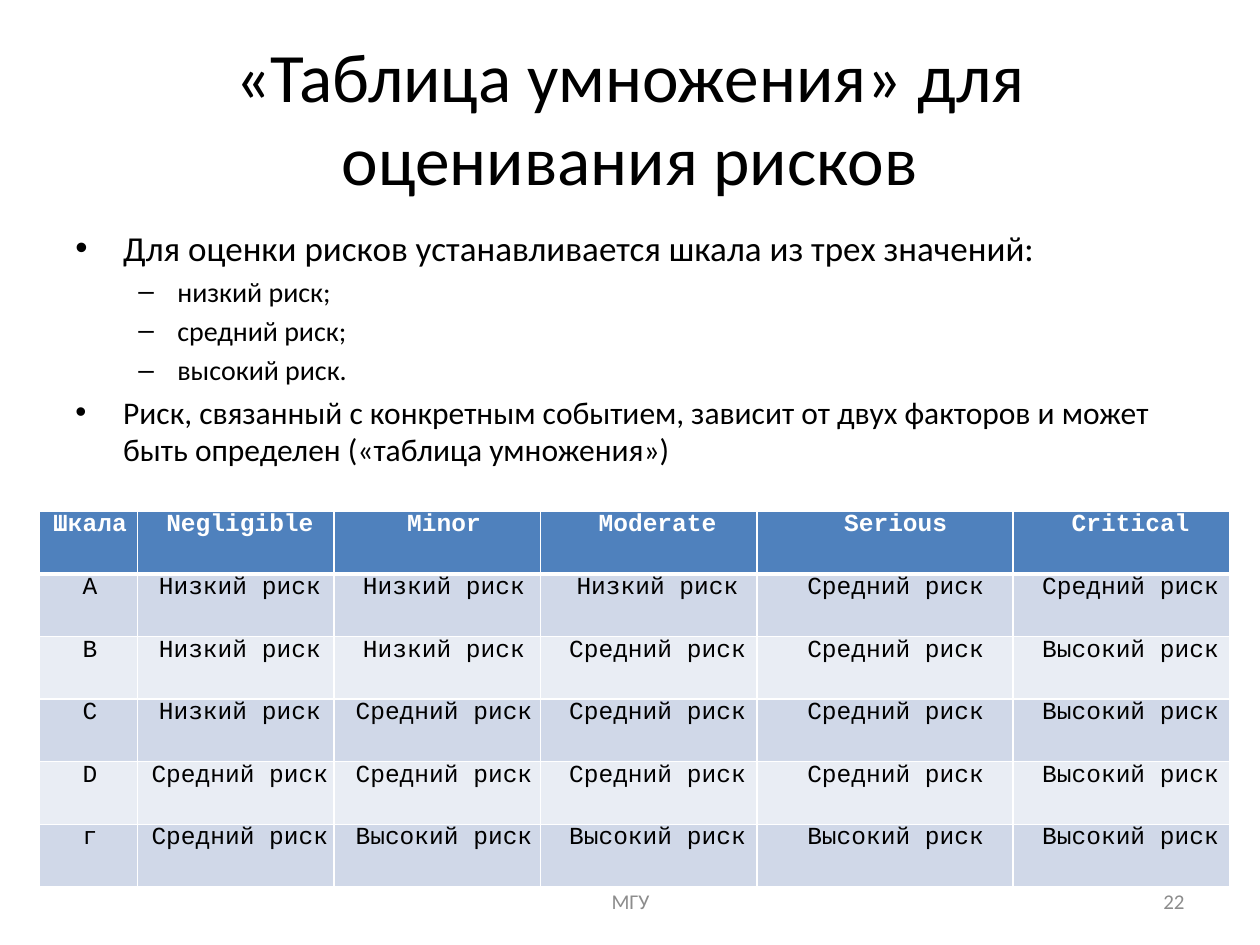
from dataclasses import dataclass

import lxml.etree
import pptx
import pptx.dml.color
import pptx.enum.text
import pptx.oxml.ns
import pptx.util

Inches = pptx.util.Inches
Pt = pptx.util.Pt
Align = pptx.enum.text.PP_ALIGN
Anchor = pptx.enum.text.MSO_ANCHOR


@dataclass(frozen=True)
class Theme:
    text_font: str = "Calibri"
    table_font: str = "Courier New"
    black: str = "000000"
    white: str = "FFFFFF"
    gray: str = "8C8C8C"
    header: str = "4F81BD"
    bands: tuple[str, str] = ("D0D8E8", "E9EDF4")
    title_size: float = 39.6
    footer_size: float = 12
    table_size: float = 14


@dataclass(frozen=True)
class Label:
    text: str
    left: float
    top: float
    width: float
    height: float
    size: float
    color: str
    align: Align


@dataclass(frozen=True)
class Level:
    bullet: str
    margin: float
    indent: float


@dataclass(frozen=True)
class Bullet:
    text: str
    level: Level
    size: float


@dataclass(frozen=True)
class Column:
    heading: str
    width: float
    indent: float


THEME = Theme()
LABELS = [
    Label("«Таблица умножения» для оценивания рисков", 0.5, 0.3, 9, 1.25,
          THEME.title_size, THEME.black, Align.CENTER),
    Label("МГУ", 3.42, 6.95, 3.17, 0.4, THEME.footer_size, THEME.gray, Align.CENTER),
    Label("22", 7.17, 6.95, 2.33, 0.4, THEME.footer_size, THEME.gray, Align.RIGHT),
]
MAIN = Level("•", 0.38, -0.38)
SUB = Level("–", 0.81, -0.31)
BULLETS = [
    Bullet("Для оценки рисков устанавливается шкала из трех значений:", MAIN, 20),
    Bullet("низкий риск;", SUB, 16),
    Bullet("средний риск;", SUB, 16),
    Bullet("высокий риск.", SUB, 16),
    Bullet("Риск, связанный с конкретным событием, зависит от двух факторов и может "
           "быть определен («таблица умножения»)", MAIN, 18),
]
COLUMNS = [
    Column("Шкала", 0.78, 0.03),
    Column("Negligible", 1.56, 0.07),
    Column("Minor", 1.64, 0.11),
    Column("Moderate", 1.72, 0.14),
    Column("Serious", 2.03, 0.17),
    Column("Critical", 1.72, 0.15),
]
LOW, MEDIUM, HIGH = "Низкий риск", "Средний риск", "Высокий риск"
RISKS = [
    ["А", LOW, LOW, LOW, MEDIUM, MEDIUM],
    ["В", LOW, LOW, MEDIUM, MEDIUM, HIGH],
    ["С", LOW, MEDIUM, MEDIUM, MEDIUM, HIGH],
    ["D", MEDIUM, MEDIUM, MEDIUM, MEDIUM, HIGH],
    ["г", MEDIUM, HIGH, HIGH, HIGH, HIGH],
]


def color_of(value: str) -> pptx.dml.color.RGBColor:
    return pptx.dml.color.RGBColor.from_string(value)


def add_element(parent, tag: str, **attributes: str):
    element = lxml.etree.SubElement(parent, pptx.oxml.ns.qn(tag))
    for name, value in attributes.items():
        element.set(name, value)
    return element


def format_runs(paragraph, font: str, size: float, color: str, bold: bool = False) -> None:
    for run in paragraph.runs:
        run.font.name = font
        run.font.size = Pt(size)
        run.font.bold = bold
        run.font.color.rgb = color_of(color)


def set_indent(paragraph, margin: float, indent: float = 0):
    properties = paragraph._p.get_or_add_pPr()
    properties.set("marL", str(Inches(margin)))
    properties.set("indent", str(Inches(indent)))
    return properties


def add_label(slide, label: Label) -> None:
    shape = slide.shapes.add_textbox(Inches(label.left), Inches(label.top),
                                     Inches(label.width), Inches(label.height))
    text_frame = shape.text_frame
    text_frame.word_wrap = True
    text_frame.vertical_anchor = Anchor.MIDDLE
    text_frame.text = label.text
    paragraph = text_frame.paragraphs[0]
    paragraph.alignment = label.align
    format_runs(paragraph, THEME.text_font, label.size, label.color)


def add_bullets(slide, bullets: list[Bullet]) -> None:
    shape = slide.shapes.add_textbox(Inches(0.5), Inches(1.75), Inches(9), Inches(4.95))
    text_frame = shape.text_frame
    text_frame.word_wrap = True
    text_frame.text = "\n".join(bullet.text for bullet in bullets)
    for paragraph, bullet in zip(text_frame.paragraphs, bullets):
        paragraph.level = 0 if bullet.level is MAIN else 1
        paragraph.space_before = Pt(bullet.size * 0.2)
        properties = set_indent(paragraph, bullet.level.margin, bullet.level.indent)
        add_element(properties, "a:buFont", typeface="Arial")
        add_element(properties, "a:buChar", char=bullet.level.bullet)
        format_runs(paragraph, THEME.text_font, bullet.size, THEME.black)


def set_borders(cell, bottom_width: float) -> None:
    properties = cell._tc.get_or_add_tcPr()
    for side, width in (("L", 1), ("R", 1), ("T", 1), ("B", bottom_width)):
        line = add_element(properties, f"a:ln{side}", w=str(Pt(width)))
        fill = add_element(line, "a:solidFill")
        add_element(fill, "a:srgbClr", val=THEME.white)


def add_risk_table(slide) -> None:
    rows = [[column.heading for column in COLUMNS]] + RISKS
    row_height = 2.98 / len(rows)
    table = slide.shapes.add_table(
        len(rows), len(COLUMNS), Inches(0.31), Inches(4.06),
        Inches(sum(column.width for column in COLUMNS)), Inches(2.98)).table
    for table_column, column in zip(table.columns, COLUMNS):
        table_column.width = Inches(column.width)
    for row_index, values in enumerate(rows):
        table.rows[row_index].height = Inches(row_height)
        is_header = row_index == 0
        fill = THEME.header if is_header else THEME.bands[(row_index - 1) % 2]
        for column_index, value in enumerate(values):
            cell = table.cell(row_index, column_index)
            cell.margin_left = cell.margin_right = Inches(0.01)
            cell.margin_top = cell.margin_bottom = 0
            set_borders(cell, 3 if is_header else 1)
            cell.fill.solid()
            cell.fill.fore_color.rgb = color_of(fill)
            cell.text_frame.text = value
            paragraph = cell.text_frame.paragraphs[0]
            paragraph.alignment = Align.CENTER
            set_indent(paragraph, COLUMNS[column_index].indent)
            format_runs(paragraph, THEME.table_font, THEME.table_size,
                        THEME.white if is_header else THEME.black, is_header)


def main() -> None:
    presentation = pptx.Presentation()
    presentation.slide_width = Inches(10)
    presentation.slide_height = Inches(7.5)
    slide = presentation.slides.add_slide(presentation.slide_layouts[6])
    for label in LABELS:
        add_label(slide, label)
    add_bullets(slide, BULLETS)
    add_risk_table(slide)
    presentation.save("out.pptx")


if __name__ == "__main__":
    main()
